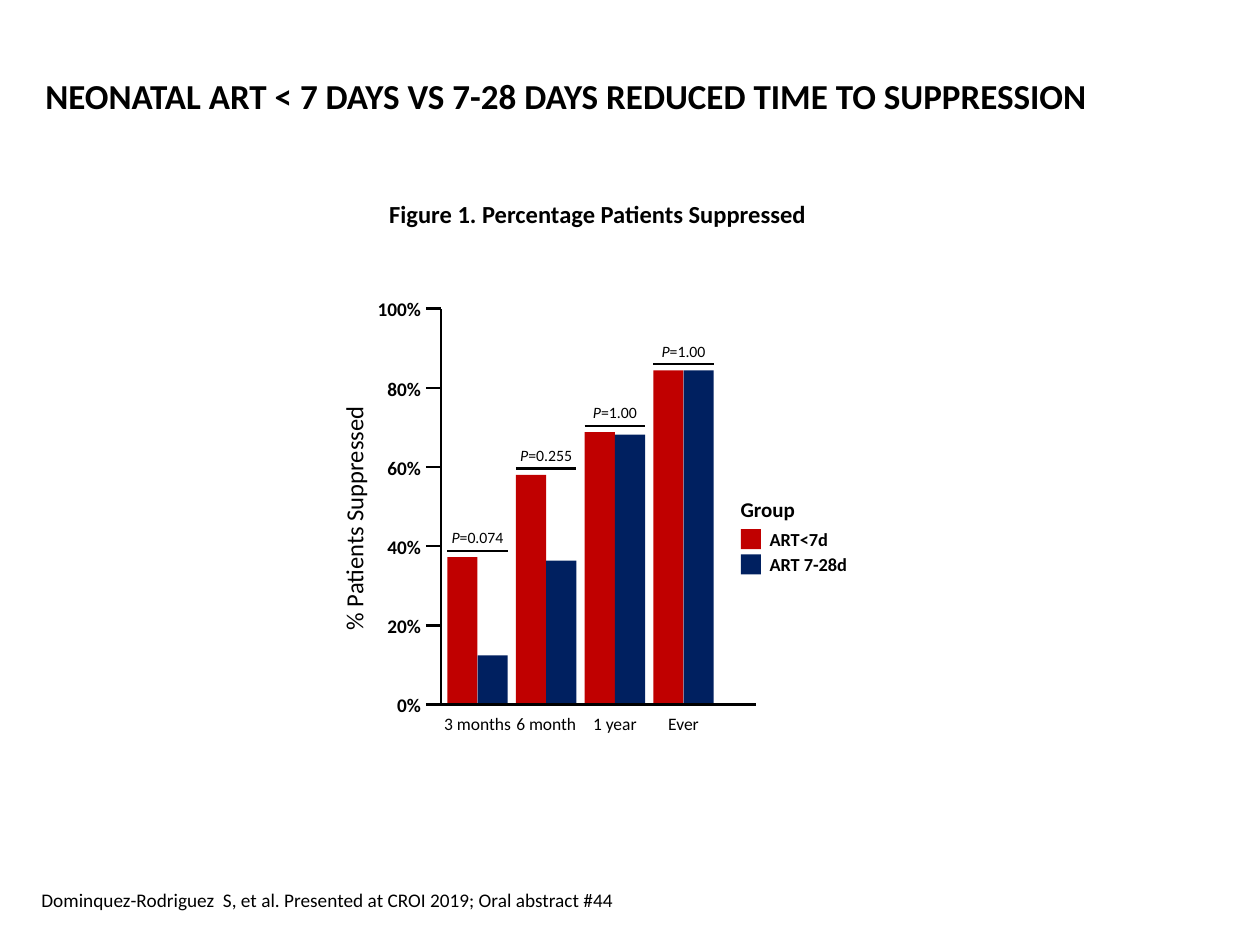
from lxml.etree import SubElement
from pptx import Presentation
from pptx.dml.color import RGBColor as RGB
from pptx.enum.shapes import MSO_CONNECTOR as Link, MSO_SHAPE as Shape
from pptx.enum.text import MSO_ANCHOR as Anchor, PP_ALIGN as Align
from pptx.oxml.ns import qn
from pptx.util import Inches, Pt

TITLE = "NEONATAL ART < 7 DAYS VS 7-28 DAYS REDUCED TIME TO SUPPRESSION"
FIGURE = "Figure 1. Percentage Patients Suppressed"
SOURCE = "Dominquez-Rodriguez  S, et al. Presented at CROI 2019; Oral abstract #44"
AXIS = "% Patients Suppressed"
TICKS = [0, 20, 40, 60, 80, 100]
TIMES = ["3 months", "6 month", "1 year", "Ever"]
PVALS = ["=0.074", "=0.255", "=1.00", "=1.00"]
GROUPS = [
    ("ART<7d", "red", [37.2, 58, 68.8, 84.4]),
    ("ART 7-28d", "navy", [12.4, 36.3, 68.2, 84.4]),
]

THEME = {
    "font": "Calibri", "line": 1.5,
    "ink": RGB(0, 0, 0), "red": RGB(0xC0, 0, 0), "navy": RGB(0, 0x20, 0x60),
    "title": 20, "figure": 14, "group": 12, "body": 11,
    "key": 10.5, "time": 10, "pval": 9,
}

LEFT, TOP, BASE = 3.5, 2.45, 5.59
FIRST, STEP, BAR = 3.55, 0.545, 0.24

prs = Presentation()
prs.slide_width, prs.slide_height = Inches(10), Inches(7.5)
slide = prs.slides.add_slide(prs.slide_layouts[5])


def text(words, box, size, bold=False, align=Align.LEFT, anchor=Anchor.TOP,
         wrap=True, lead="", turn=None, shape=None):
    """Write words into a box, after an optional italic lead."""
    left, top, width, height = map(Inches, box)
    if shape is None:
        shape = slide.shapes.add_textbox(left, top, width, height)
    else:
        shape.left, shape.top, shape.width, shape.height = left, top, width, height
    frame = shape.text_frame
    frame.word_wrap, frame.vertical_anchor = wrap, anchor
    if turn:
        frame._txBody.bodyPr.set("vert", turn)
    para = frame.paragraphs[0]
    para.alignment = align
    for part, slant in ((lead, True), (words, False)):
        if part:
            run = para.add_run()
            run.text = part
            font = run.font
            font.name, font.size = THEME["font"], Pt(THEME[size])
            font.bold, font.italic = bold, slant
            font.color.rgb = THEME["ink"]


def rule(x1, y1, x2, y2):
    line = slide.shapes.add_connector(
        Link.STRAIGHT, *map(Inches, (x1, y1, x2, y2)))
    line.line.color.rgb, line.line.width = THEME["ink"], Pt(THEME["line"])
    SubElement(line._element.spPr, qn("a:effectLst"))


def block(box, color):
    rect = slide.shapes.add_shape(Shape.RECTANGLE, *map(Inches, box))
    rect.shadow.inherit = False
    rect.fill.solid()
    rect.fill.fore_color.rgb = THEME[color]
    rect.line.fill.background()


def level(val):
    """Height on the slide of a percentage."""
    return BASE - (BASE - TOP) * val / 100


def axes():
    rule(LEFT, BASE, LEFT, TOP)
    for val in TICKS:
        y = level(val)
        rule(LEFT - 0.12, y, LEFT, y)
        text(f"{val}%", (2.74, y - 0.13, 0.7, 0.27), "body", bold=True,
             align=Align.RIGHT, anchor=Anchor.MIDDLE)
    text(AXIS, (2.64, 2.83, 0.44, 2.27), "figure", turn="vert270")


def bars():
    for j, (_, color, vals) in enumerate(GROUPS):
        for i, val in enumerate(vals):
            y = level(val)
            block((FIRST + STEP * i + BAR * j, y, BAR, BASE - y), color)


def marks():
    """Time labels under the bars, P values over them."""
    for i, (time, pval) in enumerate(zip(TIMES, PVALS)):
        mid = FIRST + BAR + STEP * i
        text(time, (mid - 0.45, BASE + 0.02, 0.9, 0.27), "time",
             align=Align.CENTER)
        y = level(max(vals[i] for _, _, vals in GROUPS)) - 0.05
        rule(mid - BAR, y, mid + BAR, y)
        text(pval, (mid - 0.33, y - 0.23, 0.66, 0.25), "pval",
             align=Align.CENTER, wrap=False, lead="P")


def key():
    text("Group", (5.78, 3.89, 1.19, 0.3), "group", bold=True)
    for i, (name, color, _) in enumerate(GROUPS):
        y = 4.2 + 0.2 * i
        block((5.88, y, 0.16, 0.16), color)
        text(name, (6.01, y - 0.06, 0.96, 0.28), "key", bold=True,
             anchor=Anchor.MIDDLE)


text(TITLE, (0.26, 0.29, 9.53, 0.94), "title", bold=True,
     anchor=Anchor.MIDDLE, shape=slide.shapes.title)
text(FIGURE, (2.99, 1.53, 3.54, 0.34), "figure", bold=True)
text(SOURCE, (0.23, 6.94, 9.53, 0.4), "body", anchor=Anchor.MIDDLE)
axes()
bars()
marks()
key()
rule(3.48, BASE, 6, BASE)
prs.save("out.pptx")
